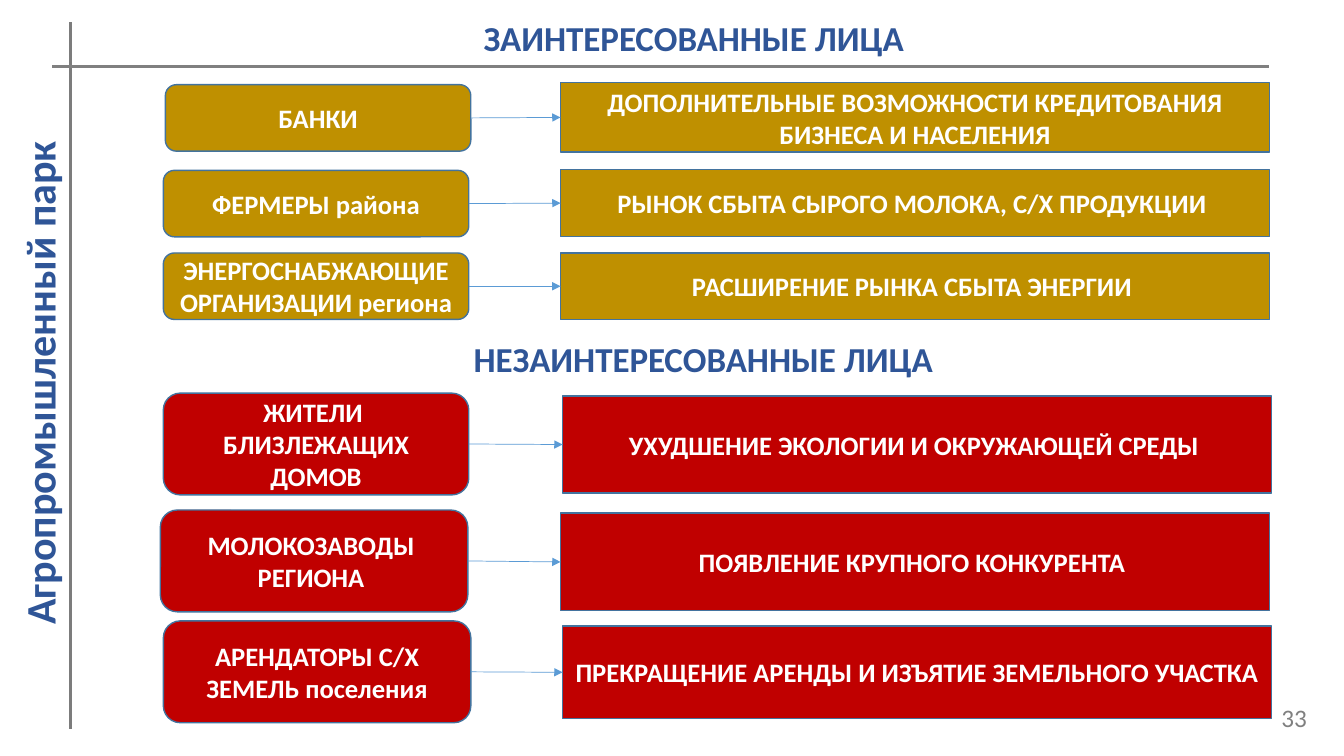
import pptx
import pptx.dml.color
import pptx.enum.shapes
import pptx.enum.text
import pptx.oxml
import pptx.util

Inches = pptx.util.Inches
RGB = pptx.dml.color.RGBColor
MSO_SHAPE = pptx.enum.shapes.MSO_SHAPE
ALIGN = pptx.enum.text.PP_ALIGN
ANCHOR = pptx.enum.text.MSO_ANCHOR
FIT = pptx.enum.text.MSO_AUTO_SIZE

GOLD = RGB(0xBF, 0x90, 0x00)
RED = RGB(0xC0, 0x00, 0x00)
WHITE = RGB(0xFF, 0xFF, 0xFF)
NAVY = RGB(0x2F, 0x55, 0x97)
OUTLINE = RGB(0x43, 0x73, 0x9E)
ARROW = RGB(0x5B, 0x9B, 0xD5)
GREY = RGB(0x80, 0x80, 0x80)
DARK_GREY = RGB(0x7C, 0x7C, 0x7C)

BOX_FRAME = {"word_wrap": True, "vertical_anchor": ANCHOR.MIDDLE}
LABEL_FRAME = {"word_wrap": False, "vertical_anchor": ANCHOR.TOP,
               "auto_size": FIT.SHAPE_TO_FIT_TEXT}

# Colour, party, its box, effect, its box (left, top, width, height)
ROWS = [
    (GOLD, "БАНКИ", (1.64, 0.84, 3.03, 0.66),
     "ДОПОЛНИТЕЛЬНЫЕ ВОЗМОЖНОСТИ КРЕДИТОВАНИЯ БИЗНЕСА И НАСЕЛЕНИЯ",
     (5.56, 0.82, 7.03, 0.69)),
    (GOLD, "ФЕРМЕРЫ района", (1.62, 1.69, 3.03, 0.66),
     "РЫНОК СБЫТА СЫРОГО МОЛОКА, С/Х ПРОДУКЦИИ ", (5.56, 1.68, 7.03, 0.67)),
    (GOLD, "ЭНЕРГОСНАБЖАЮЩИЕ ОРГАНИЗАЦИИ региона", (1.62, 2.51, 3.03, 0.66),
     "РАСШИРЕНИЕ РЫНКА СБЫТА ЭНЕРГИИ ", (5.56, 2.51, 7.03, 0.66)),
    (RED, "ЖИТЕЛИ \nБЛИЗЛЕЖАЩИХ ДОМОВ", (1.62, 3.9, 3.03, 1.01),
     "УХУДШЕНИЕ ЭКОЛОГИИ И ОКРУЖАЮЩЕЙ СРЕДЫ ", (5.58, 3.93, 7.03, 0.96)),
    (RED, "МОЛОКОЗАВОДЫ \nРЕГИОНА ", (1.59, 5.06, 3.05, 1.01),
     "ПОЯВЛЕНИЕ КРУПНОГО КОНКУРЕНТА ", (5.56, 5.09, 7.03, 0.97)),
    (RED, "АРЕНДАТОРЫ С/Х ЗЕМЕЛЬ поселения", (1.62, 6.16, 3.05, 1.01),
     "ПРЕКРАЩЕНИЕ АРЕНДЫ И ИЗЪЯТИЕ ЗЕМЕЛЬНОГО УЧАСТКА ",
     (5.58, 6.21, 7.03, 0.92)),
]


def set_text(sp, text, size, color, frame, bold=True, align=ALIGN.CENTER):
    tf = sp.text_frame
    tf.text = text
    for name, value in frame.items():
        setattr(tf, name, value)
    font = {"name": "Calibri", "size": pptx.util.Pt(size), "bold": bold}
    for p in tf.paragraphs:
        p.alignment = align
        for r in p.runs:
            for name, value in font.items():
                setattr(r.font, name, value)
            r.font.color.rgb = color


def add_box(s, kind, box, text, fill):
    sp = s.shapes.add_shape(kind, *map(Inches, box))
    sp.shadow.inherit = False
    sp.fill.solid()
    sp.fill.fore_color.rgb = fill
    sp.line.color.rgb = OUTLINE
    sp.line.width = pptx.util.Pt(1)
    set_text(sp, text, 19, WHITE, BOX_FRAME)
    return sp


def add_label(s, box, text, size, color, frame, **style):
    sp = s.shapes.add_textbox(*map(Inches, box))
    set_text(sp, text, size, color, frame, **style)
    return sp


def add_line(s, ends, color, width):
    line = s.shapes.add_connector(
        pptx.enum.shapes.MSO_CONNECTOR.STRAIGHT, *map(Inches, ends))
    line.line.color.rgb = color
    line.line.width = pptx.util.Pt(width)
    pptx.oxml.ns.qn("a:effectLst")
    line._element.spPr.append(pptx.oxml.xmlchemy.OxmlElement("a:effectLst"))
    return line


def add_arrow(s, start, end):
    arrow = add_line(s, (0, 0, 1, 1), ARROW, 0.5)
    arrow.begin_connect(start, 3)
    arrow.end_connect(end, 1)
    tail = pptx.oxml.xmlchemy.OxmlElement("a:tailEnd")
    tail.set("type", "triangle")
    arrow.line._get_or_add_ln().append(tail)


def place_title(s, box, text):
    sp = s.shapes.title
    for name, value in zip(("left", "top", "width", "height"), box):
        setattr(sp, name, Inches(value))
    set_text(sp, text, 25, NAVY, LABEL_FRAME)


def main():
    prs = pptx.Presentation()
    prs.slide_width, prs.slide_height = Inches(13.33), Inches(7.5)
    s = prs.slides.add_slide(prs.slide_layouts[5])

    # Headings
    place_title(s, (4.67, 0.11, 4.42, 0.52), "ЗАИНТЕРЕСОВАННЫЕ ЛИЦА")
    add_label(s, (4.57, 3.3, 4.81, 0.52), "НЕЗАИНТЕРЕСОВАННЫЕ ЛИЦА",
              25, NAVY, LABEL_FRAME)

    # Parties and what the project means for them
    for color, party, party_box, effect, effect_box in ROWS:
        start = add_box(s, MSO_SHAPE.ROUNDED_RECTANGLE, party_box, party, color)
        end = add_box(s, MSO_SHAPE.RECTANGLE, effect_box, effect, color)
        add_arrow(s, start, end)

    # Frame lines, side caption and page number
    add_line(s, (0.7, 0.22, 0.7, 7.23), DARK_GREY, 2.25)
    add_line(s, (0.52, 0.66, 12.59, 0.66), GREY, 2)
    caption = add_label(s, (-2.18, 3.42, 5.14, 0.61), "Агропромышленный парк",
                        30, NAVY, LABEL_FRAME, align=ALIGN.LEFT)
    caption.rotation = 270
    add_label(s, (10.06, 6.92, 3, 0.4), "33", 18, GREY, BOX_FRAME,
              bold=False, align=ALIGN.RIGHT)

    prs.save("out.pptx")


if __name__ == "__main__":
    main()
